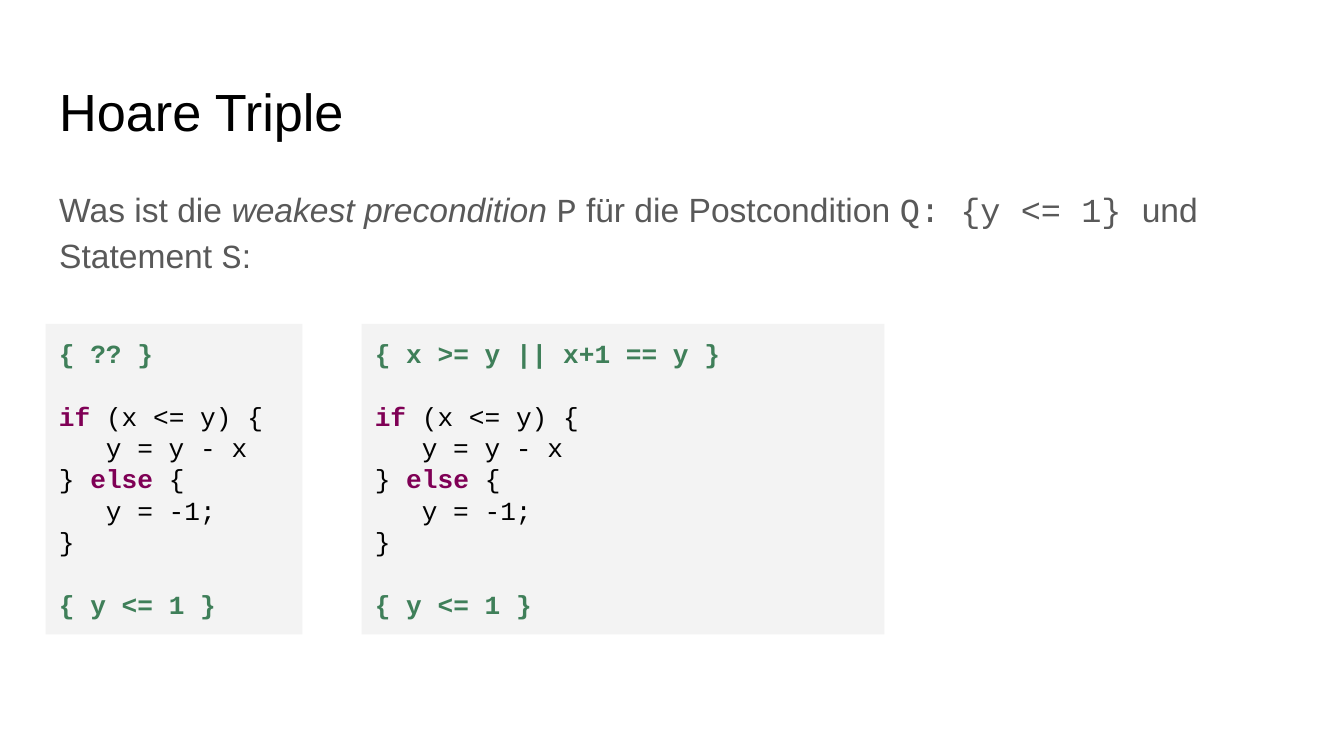
import pptx
import pptx.util
import pptx.dml.color
import pptx.enum.shapes
import pptx.enum.text
from dataclasses import dataclass

Inches = pptx.util.Inches
Pt = pptx.util.Pt


@dataclass(frozen=True)
class Theme:
    sans: str = "Arial"
    mono: str = "Courier New"
    black: str = "000000"
    gray: str = "595959"
    green: str = "3F7F59"
    plum: str = "7F0055"
    panel: str = "F3F3F3"
    head: float = 28
    body: float = 18
    code: float = 14
    pitch: float = 16.8


class Deck:
    def __init__(self, theme):
        self.theme = theme
        self.file = pptx.Presentation()
        self.file.slide_width = Inches(10)
        self.file.slide_height = Inches(10 * 9 / 16)
        self.slide = self.file.slides.add_slide(self.file.slide_layouts[1])

    def place(self, shape, left, top, width, height):
        shape.left, shape.top = Inches(left), Inches(top)
        shape.width, shape.height = Inches(width), Inches(height)

    def frame(self, shape):
        frame = shape.text_frame
        frame.word_wrap = True
        frame.auto_size = pptx.enum.text.MSO_AUTO_SIZE.NONE
        frame.vertical_anchor = pptx.enum.text.MSO_ANCHOR.TOP
        frame.margin_left = frame.margin_right = Inches(0.1)
        frame.margin_top = frame.margin_bottom = Inches(0.1)
        return frame

    def align(self, para, indent=0):
        para.alignment = pptx.enum.text.PP_ALIGN.LEFT
        para.space_before = Pt(0)
        props = para._p.get_or_add_pPr()
        props.set("marL", str(Inches(indent)))
        props.set("indent", "0")

    def run(self, para, text, font, size, color, bold=False, italic=False):
        run = para.add_run()
        run.text = text
        run.font.name = font
        run.font.size = Pt(size)
        run.font.bold = bold
        run.font.italic = italic
        run.font.color.rgb = pptx.dml.color.RGBColor.from_string(color)

    def title(self, text, *area):
        shape = self.slide.shapes.title
        self.place(shape, *area)
        para = self.frame(shape).paragraphs[0]
        self.align(para)
        self.run(para, text, self.theme.sans, self.theme.head, self.theme.black)

    def body(self, parts, *area):
        shape = self.slide.placeholders[1]
        self.place(shape, *area)
        para = self.frame(shape).paragraphs[0]
        self.align(para)
        para.line_spacing = 1.15
        para.space_after = Pt(16)
        props = para._p.get_or_add_pPr()
        props.append(pptx.oxml.parse_xml(
            '<a:buNone xmlns:a="http://schemas.openxmlformats.org/drawingml/2006/main"/>'))
        for text, font, italic in parts:
            self.run(para, text, font, self.theme.body, self.theme.gray, italic=italic)

    def code(self, lines, left, top, width, height):
        shape = self.slide.shapes.add_shape(
            pptx.enum.shapes.MSO_SHAPE.RECTANGLE,
            Inches(left), Inches(top), Inches(width), Inches(height))
        shape.shadow.inherit = False
        shape.fill.solid()
        shape.fill.fore_color.rgb = pptx.dml.color.RGBColor.from_string(self.theme.panel)
        shape.line.fill.background()
        frame = self.frame(shape)
        for num, (indent, gap, parts) in enumerate(lines):
            para = frame.add_paragraph() if num else frame.paragraphs[0]
            self.align(para, indent)
            para.line_spacing = Pt(self.theme.pitch)
            para.space_before = Pt(self.theme.pitch * gap)
            for text, color in parts:
                self.run(para, text, self.theme.mono, self.theme.code, color,
                         bold=color != self.theme.black)


def main():
    theme = Theme()
    deck = Deck(theme)
    left, width = 0.34, 9.32
    deck.title("Hoare Triple", left, 0.49, width, 0.63)
    deck.body([
        ("Was ist die ", theme.sans, False),
        ("weakest precondition ", theme.sans, True),
        ("P", theme.mono, False),
        (" für die Postcondition ", theme.sans, False),
        ("Q: {y <= 1} ", theme.mono, False),
        ("und Statement ", theme.sans, False),
        ("S", theme.mono, False),
        (":", theme.sans, False),
    ], left, 1.26, width, 0.86)

    tab = 0.35
    branch = [
        (0, 1, [("if", theme.plum), (" (x <= y) {", theme.black)]),
        (tab, 0, [("y = y - x", theme.black)]),
        (0, 0, [("} ", theme.black), ("else", theme.plum), (" {", theme.black)]),
        (tab, 0, [("y = -1;", theme.black)]),
        (0, 0, [("}", theme.black)]),
        (0, 1, [("{ y <= 1 }", theme.green)]),
    ]
    for pre, start, span in [("{ ?? }", left, 1.91),
                             ("{ x >= y || x+1 == y }", 2.69, 3.89)]:
        deck.code([(0, 0, [(pre, theme.green)])] + branch, start, 2.41, span, 2.31)
    deck.file.save("out.pptx")


if __name__ == "__main__":
    main()
